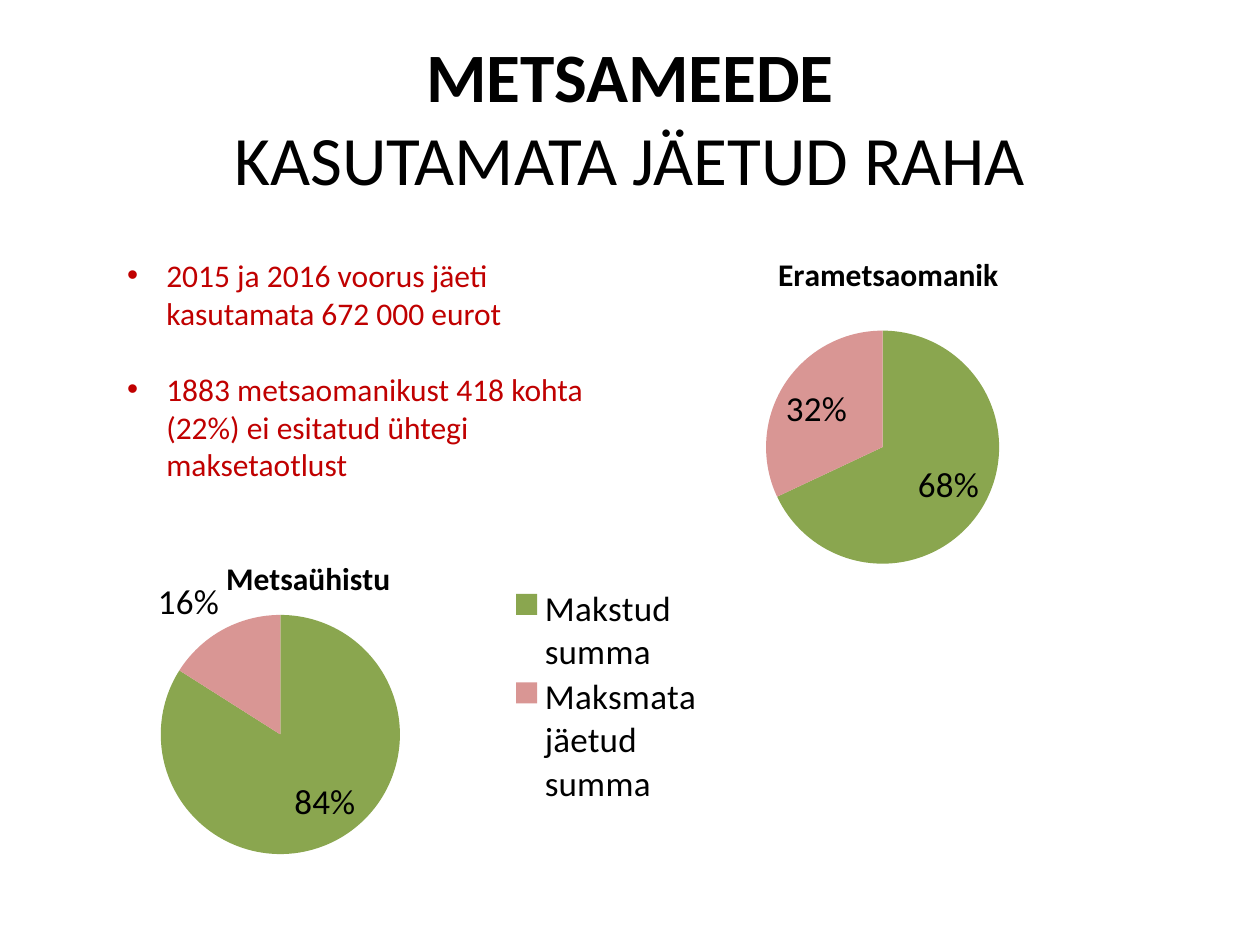
from lxml import etree
from pptx import Presentation
from pptx.chart.data import CategoryChartData as ChartData
from pptx.dml.color import RGBColor
from pptx.enum.chart import XL_CHART_TYPE as Kind
from pptx.enum.chart import XL_LABEL_POSITION as Spot
from pptx.enum.chart import XL_LEGEND_POSITION as Side
from pptx.enum.text import MSO_ANCHOR as Anchor
from pptx.enum.text import MSO_AUTO_SIZE as Fit
from pptx.enum.text import PP_ALIGN as Align
from pptx.oxml.ns import qn
from pptx.util import Inches, Pt

# Content
FONT = "Calibri"
BLACK, RED, GREEN, PINK = "000000", "C00000", "8AA64F", "D99694"
TITLE = [("METSAMEEDE", True), ("KASUTAMATA JÄETUD RAHA", False)]
POINTS = [
    "2015 ja 2016 voorus jäeti kasutamata 672 000 eurot",
    "1883 metsaomanikust 418 kohta (22%) ei esitatud ühtegi maksetaotlust",
]
# Layouts are fractions of the chart: left, top, width, height
PIES = [
    {"name": "Metsaühistu", "cats": ["Makstud summa", "Maksmata jäetud summa"],
     "vals": [84, 16], "box": (0.43, 3.83, 5.28, 3.39), "head": (0.25, 0.16),
     "plot": (0.16, 0.31, 0.36, 0.56), "legend": (0.69, 0.24, 0.28, 0.52)},
    {"name": "Erametsaomanik", "cats": ["1", "2"],
     "vals": [68, 32], "box": (4.53, 1.78, 5, 3), "head": (0.32, 0.06),
     "plot": (0.31, 0.28, 0.37, 0.62), "legend": None},
]


def paint(font, size, color=BLACK, bold=False):
    font.name, font.size, font.bold = FONT, Pt(size), bold
    font.color.rgb = RGBColor.from_string(color)


def place(shape, box):
    shape.left, shape.top, shape.width, shape.height = map(Inches, box)


def lay_out(part, spots, inner=False):
    """Give a title, plot area or legend a fixed place in its chart."""
    for old in part.findall(qn("c:layout")):
        part.remove(old)
    layout = etree.Element(qn("c:layout"))
    manual = etree.SubElement(layout, qn("c:manualLayout"))
    rules = [("layoutTarget", "inner")] if inner else []
    rules += [("xMode", "edge"), ("yMode", "edge"), *zip("xywh", spots)]
    for tag, val in rules:
        etree.SubElement(manual, qn("c:" + tag)).set("val", str(val))
    before = [n for n in part if n.tag in (qn("c:tx"), qn("c:legendPos"))]
    part.insert(len(before), layout)


def add_pie(slide, pie):
    data = ChartData()
    data.categories = pie["cats"]
    data.add_series(pie["name"], pie["vals"])
    box = map(Inches, pie["box"])
    chart = slide.shapes.add_chart(Kind.PIE, *box, data).chart
    paint(chart.font, 10)

    # Heading and plot area
    frame = chart.chart_title.text_frame
    run = frame.paragraphs[0].add_run()
    run.text = pie["name"]
    paint(run.font, 18, bold=True)
    chart.chart_title.include_in_layout = False
    root = chart.element.find(qn("c:chart"))
    lay_out(root.find(qn("c:title")), pie["head"])
    lay_out(root.find(qn("c:plotArea")), pie["plot"], inner=True)

    # Slices and labels
    plot = chart.plots[0]
    plot.vary_by_categories = True
    for i, color in enumerate([GREEN, PINK]):
        fill = plot.series[0].points[i].format.fill
        fill.solid()
        fill.fore_color.rgb = RGBColor.from_string(color)
    labels = plot.series[0].data_labels
    labels.show_percentage, labels.show_value = True, False
    labels.number_format, labels.number_format_is_linked = "0%", False
    labels.position = Spot.BEST_FIT
    paint(labels.font, 20)

    # Legend
    chart.has_legend = pie["legend"] is not None
    if chart.has_legend:
        chart.legend.position = Side.RIGHT
        chart.legend.include_in_layout = False
        paint(chart.legend.font, 20)
        lay_out(root.find(qn("c:legend")), pie["legend"])


def main():
    deck = Presentation()
    deck.slide_width, deck.slide_height = Inches(10), Inches(7.5)
    slide = deck.slides.add_slide(deck.slide_layouts[1])
    title, body = slide.placeholders

    # Title
    place(title, (0.5, 0.3, 9, 1.25))
    title.text_frame.vertical_anchor = Anchor.MIDDLE
    para = title.text_frame.paragraphs[0]
    para.alignment = Align.CENTER
    for i, (text, bold) in enumerate(TITLE):
        if i:
            para.add_line_break()
        run = para.add_run()
        run.text = text
        paint(run.font, 39.6, bold=bold)

    # Bullet list
    place(body, (0.91, 1.98, 4.25, 1.92))
    frame = body.text_frame
    frame.word_wrap, frame.auto_size = True, Fit.NONE
    for i, text in enumerate(POINTS):
        para = frame.add_paragraph() if i else frame.paragraphs[0]
        para.space_before = Pt(22 if i else 0)
        props = para._p.get_or_add_pPr()
        props.set("marL", str(Inches(0.31)))
        props.set("indent", str(-Inches(0.31)))
        run = para.add_run()
        run.text = text
        paint(run.font, 18, RED)

    for pie in PIES:
        add_pie(slide, pie)
    deck.save("out.pptx")


if __name__ == "__main__":
    main()
